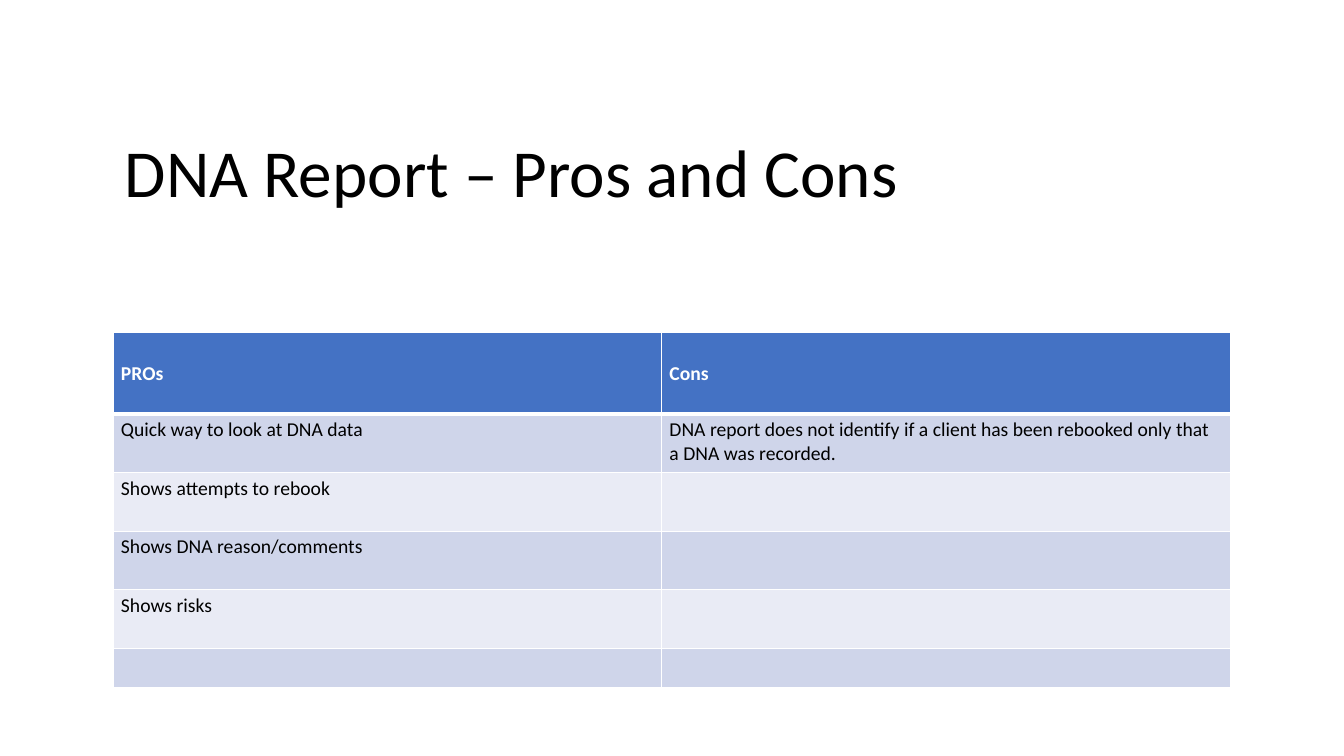
from lxml import etree
from pptx import Presentation
from pptx import util as u
from pptx.dml.color import RGBColor
from pptx.enum import text
from pptx.oxml.ns import qn

COLORS = {"ink": "000000", "white": "FFFFFF", "header": "4472C4",
          "dark_band": "CFD5EA", "light_band": "E9EBF5"}
FONT = "Calibri"
COLUMNS = [5.44, 5.65]
ROWS = [0.81] + [0.58] * 4 + [0.39]
CONTENT = [
    ("PROs", "Cons"),
    ("Quick way to look at DNA data",
     "DNA report does not identify if a client has been rebooked only that a DNA was recorded."),
    ("Shows attempts to rebook", ""),
    ("Shows DNA reason/comments", ""),
    ("Shows risks", ""),
    ("", ""),
]


def add_span(para, words, size, color, bold=False):
    span = para.add_run()
    span.text = words
    span.font.name = FONT
    span.font.size = u.Pt(size)
    span.font.bold = bold
    span.font.color.rgb = RGBColor.from_string(COLORS[color])


def add_border(cell, side, points):
    """Draw a white line on one side (L, R, T or B) of a cell."""
    line = etree.SubElement(cell._tc.get_or_add_tcPr(), qn(f"a:ln{side}"), w=str(u.Pt(points)))
    fill = etree.SubElement(line, qn("a:solidFill"))
    etree.SubElement(fill, qn("a:srgbClr"), val=COLORS["white"])


deck = Presentation()
deck.slide_width, deck.slide_height = u.Inches(13.33), u.Inches(7.5)
page = deck.slides.add_slide(deck.slide_layouts[6])

# Title
box = page.shapes.add_textbox(u.Inches(1.14), u.Inches(0.89), u.Inches(11.13), u.Inches(1.7))
frame = box.text_frame
frame.word_wrap = True
frame.vertical_anchor = text.MSO_ANCHOR.MIDDLE
para = frame.paragraphs[0]
para.line_spacing = 0.9
add_span(para, "DNA Report – Pros and Cons", 48, "ink")

# Pros and cons table
table = page.shapes.add_table(len(ROWS), len(COLUMNS), u.Inches(1.12), u.Inches(3.3),
                              u.Inches(sum(COLUMNS)), u.Inches(sum(ROWS))).table
for column, width in zip(table.columns, COLUMNS):
    column.width = u.Inches(width)

for r, (height, entries) in enumerate(zip(ROWS, CONTENT)):
    table.rows[r].height = u.Inches(height)
    is_header = r == 0
    band = "header" if is_header else "dark_band" if r % 2 else "light_band"
    for c, words in enumerate(entries):
        cell = table.cell(r, c)
        cell.margin_left = cell.margin_right = u.Inches(0.08)
        cell.margin_top = cell.margin_bottom = u.Inches(0.04)
        cell.vertical_anchor = text.MSO_ANCHOR.MIDDLE if is_header else text.MSO_ANCHOR.TOP
        for side in "LRTB":
            heavy = (r, side) in [(0, "B"), (1, "T")]
            add_border(cell, side, 3 if heavy else 1)
        cell.fill.solid()
        cell.fill.fore_color.rgb = RGBColor.from_string(COLORS[band])
        if words:
            add_span(cell.text_frame.paragraphs[0], words, 14,
                     "white" if is_header else "ink", is_header)

deck.save("out.pptx")
